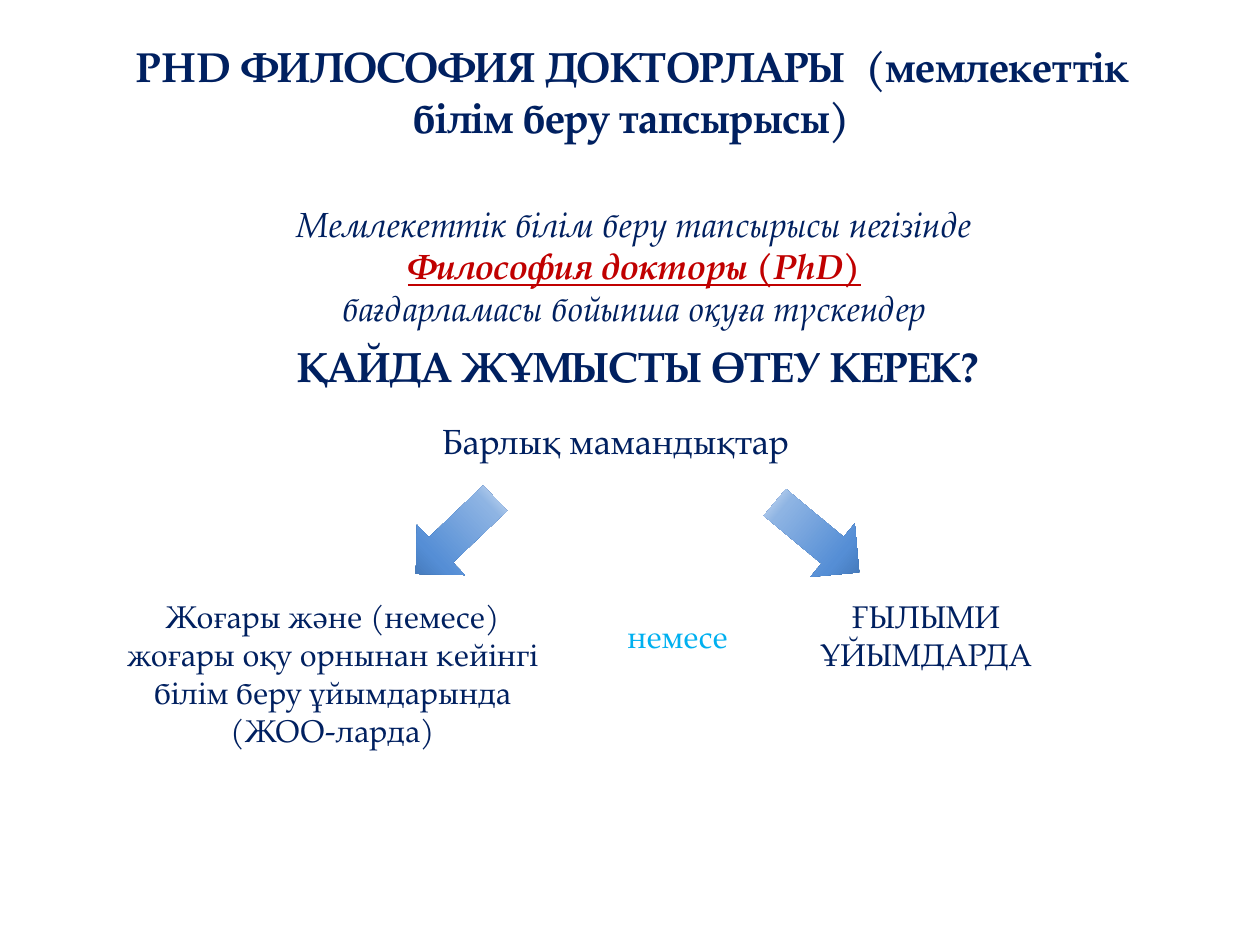
from copy import deepcopy
from dataclasses import dataclass

from pptx import Presentation
from pptx.dml.color import RGBColor
from pptx.enum import shapes, text
from pptx.util import Inches, Pt


@dataclass(frozen=True)
class Theme:
    font: str = "TeX Gyre Pagella"
    navy: str = "002060"
    red: str = "C00000"
    sky: str = "00B0F0"
    heading: int = 24
    body: int = 20
    label: int = 18
    arrow_stops: tuple = (
        (0, "2F5F99"), (0.33, "558ED5"), (0.75, "8EB4E3"), (1, "FFFFFF"))


class PageBuilder:
    def __init__(self, page, theme):
        self.page = page
        self.theme = theme

    def text_box(self, left, top, width, height, lines, size, color=None,
                 wrap=True, middle=False, **style):
        """Add a text box; each line is a string or a (string, style) pair."""
        box = self.page.shapes.add_textbox(
            Inches(left), Inches(top), Inches(width), Inches(height))
        frame = box.text_frame
        frame.word_wrap = wrap
        frame.auto_size = text.MSO_AUTO_SIZE.SHAPE_TO_FIT_TEXT
        if middle:
            frame.vertical_anchor = text.MSO_ANCHOR.MIDDLE
        for index, line in enumerate(lines):
            words, own = line if isinstance(line, tuple) else (line, {})
            look = {"color": color or self.theme.navy, **style, **own}
            para = frame.add_paragraph() if index else frame.paragraphs[0]
            para.text = words
            para.alignment = text.PP_ALIGN.CENTER if wrap else text.PP_ALIGN.LEFT
            para.font.name = self.theme.font
            para.font.size = Pt(size)
            para.font.color.rgb = RGBColor.from_string(look.pop("color"))
            for name, value in look.items():
                setattr(para.font, name, value)
        return box

    def down_arrow(self, left, top, width, height, rotation):
        """Add a rotated arrow, shaded from its tip (dark) to its tail."""
        arrow = self.page.shapes.add_shape(
            shapes.MSO_SHAPE.DOWN_ARROW,
            Inches(left), Inches(top), Inches(width), Inches(height))
        arrow.rotation = rotation
        arrow.shadow.inherit = False
        arrow.line.fill.background()
        fill = arrow.fill
        fill.gradient()
        fill.gradient_angle = 90
        stop_list = arrow.element.spPr.find(".//{*}gsLst")
        for _ in range(len(self.theme.arrow_stops) - len(stop_list)):
            stop_list.append(deepcopy(stop_list[0]))
        for stop, (position, color) in zip(
                fill.gradient_stops, self.theme.arrow_stops):
            stop.position = position
            stop.color.rgb = RGBColor.from_string(color)
        return arrow


def main():
    deck = Presentation()
    deck.slide_width, deck.slide_height = Inches(10), Inches(7.5)
    theme = Theme()
    builder = PageBuilder(deck.slides.add_slide(deck.slide_layouts[6]), theme)

    builder.text_box(
        0.92, 0.27, 8.19, 0.91,
        ["PHD ФИЛОСОФИЯ ДОКТОРЛАРЫ  (мемлекеттік білім беру тапсырысы)"],
        theme.heading, middle=True, bold=True)
    builder.text_box(
        0.35, 1.56, 9.37, 1.11,
        ["Мемлекеттік білім беру тапсырысы негізінде",
         ("Философия докторы (PhD)",
          {"color": theme.red, "bold": True, "underline": True}),
         "бағдарламасы бойынша оқуға түскендер"],
        theme.body, italic=True)
    builder.text_box(2.26, 2.65, 6.16, 0.5, ["ҚАЙДА ЖҰМЫСТЫ ӨТЕУ КЕРЕК?"],
                     theme.heading, wrap=False, bold=True)
    builder.text_box(1.28, 3.28, 7.21, 0.44, ["Барлық мамандықтар"], theme.body)

    for left, top, rotation in ((3.34, 3.82, 46.3), (6.21, 3.83, 309.7)):
        builder.down_arrow(left, top, 0.55, 0.87, rotation)

    builder.text_box(
        0.83, 4.69, 3.62, 1.31,
        ["Жоғары және (немесе) жоғары оқу орнынан кейінгі "
         "білім беру ұйымдарында (ЖОО-ларда)"], theme.label)
    builder.text_box(4.88, 4.85, 1.01, 0.4, ["немесе"],
                     theme.label, theme.sky, wrap=False)
    builder.text_box(5.97, 4.69, 2.76, 0.71, ["ҒЫЛЫМИ ҰЙЫМДАРДА"], theme.label)

    deck.save("out.pptx")


if __name__ == "__main__":
    main()
